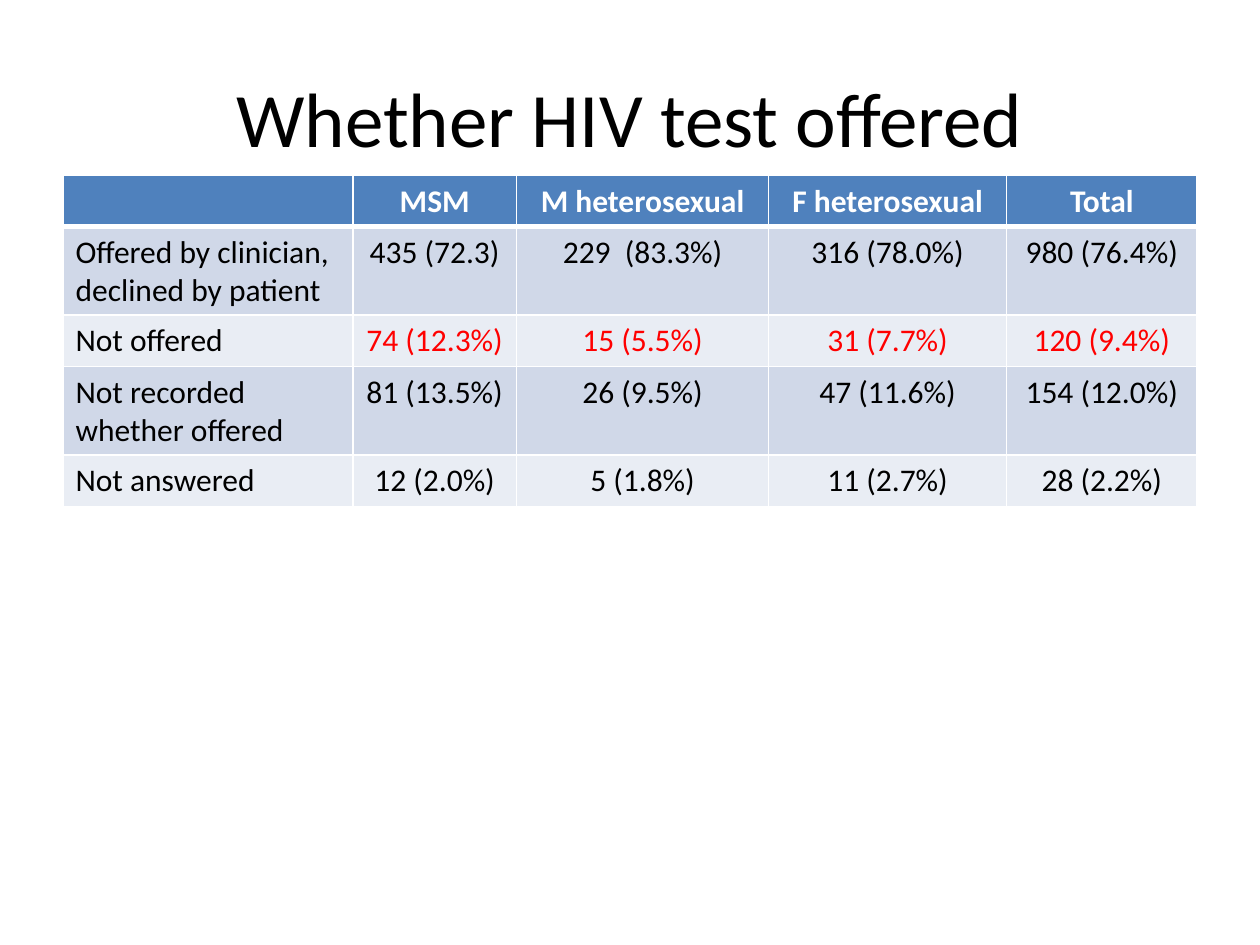
"""Build the slide on whether an HIV test was offered, by patient group."""
from lxml import etree
from pptx import Presentation
from pptx.dml.color import RGBColor
from pptx.enum import text
from pptx.oxml import ns
from pptx.util import Inches, Pt

TITLE = "Whether HIV test offered"
ROWS = [
    ("", "MSM", "M heterosexual", "F heterosexual", "Total"),
    ("Offered by clinician, declined by patient", "435 (72.3)", "229  (83.3%)", "316 (78.0%)", "980 (76.4%)"),
    ("Not offered", "74 (12.3%)", "15 (5.5%)", "31 (7.7%)", "120 (9.4%)"),
    ("Not recorded whether offered", "81 (13.5%)", "26 (9.5%)", "47 (11.6%)", "154 (12.0%)"),
    ("Not answered", "12 (2.0%)", "5 (1.8%)", "11 (2.7%)", "28 (2.2%)"),
]
COL_WIDTHS = [2.3, 1.3, 2, 1.89, 1.51]
ROW_HEIGHT = 0.41
RED_ROW = 2

BLACK = RGBColor(0x00, 0x00, 0x00)
WHITE = RGBColor(0xFF, 0xFF, 0xFF)
RED = RGBColor(0xFF, 0x00, 0x00)
BLUE = RGBColor(0x4F, 0x81, 0xBD)
BANDS = [RGBColor(0xE9, 0xED, 0xF4), RGBColor(0xD0, 0xD8, 0xE8)]


def write(tf, words, size, color, align, bold=False):
    p = tf.paragraphs[0]
    p.alignment = align
    font = p.font
    if words:
        r = p.add_run()
        r.text = words
        font = r.font
    for name, value in {"name": "Calibri", "size": Pt(size), "bold": bold}.items():
        setattr(font, name, value)
    font.color.rgb = color


def add_borders(cell, bottom):
    tc_pr = cell._tc.get_or_add_tcPr()
    for side, width in {"L": 1, "R": 1, "T": 1, "B": bottom}.items():
        ln = etree.SubElement(tc_pr, ns.qn(f"a:ln{side}"), w=str(Pt(width)))
        fill = etree.SubElement(ln, ns.qn("a:solidFill"))
        etree.SubElement(fill, ns.qn("a:srgbClr"), val=str(WHITE))


def add_title(s):
    tf = s.shapes.add_textbox(Inches(0.5), Inches(0.3), Inches(9), Inches(1.25)).text_frame
    tf.word_wrap = True
    tf.vertical_anchor = text.MSO_ANCHOR.MIDDLE
    write(tf, TITLE, 44, BLACK, text.PP_ALIGN.CENTER)


def add_results(s):
    table = s.shapes.add_table(len(ROWS), len(COL_WIDTHS), Inches(0.5), Inches(1.39),
                               Inches(9), Inches(2.62)).table
    for col, width in zip(table.columns, COL_WIDTHS):
        col.width = Inches(width)
    for i, row in enumerate(ROWS):
        table.rows[i].height = Inches(ROW_HEIGHT)
        header = i == 0
        for j, words in enumerate(row):
            cell = table.cell(i, j)
            add_borders(cell, 3 if header else 1)
            cell.fill.solid()
            cell.fill.fore_color.rgb = BLUE if header else BANDS[i % 2]
            cell.vertical_anchor = text.MSO_ANCHOR.BOTTOM if header else text.MSO_ANCHOR.TOP
            color = WHITE if header else RED if i == RED_ROW and j else BLACK
            align = text.PP_ALIGN.CENTER if j else text.PP_ALIGN.LEFT
            write(cell.text_frame, words, 18, color, align, header)


def main():
    prs = Presentation()
    prs.slide_width, prs.slide_height = Inches(10), Inches(7.5)
    s = prs.slides.add_slide(prs.slide_layouts[6])
    add_title(s)
    add_results(s)
    prs.save("out.pptx")


if __name__ == "__main__":
    main()
